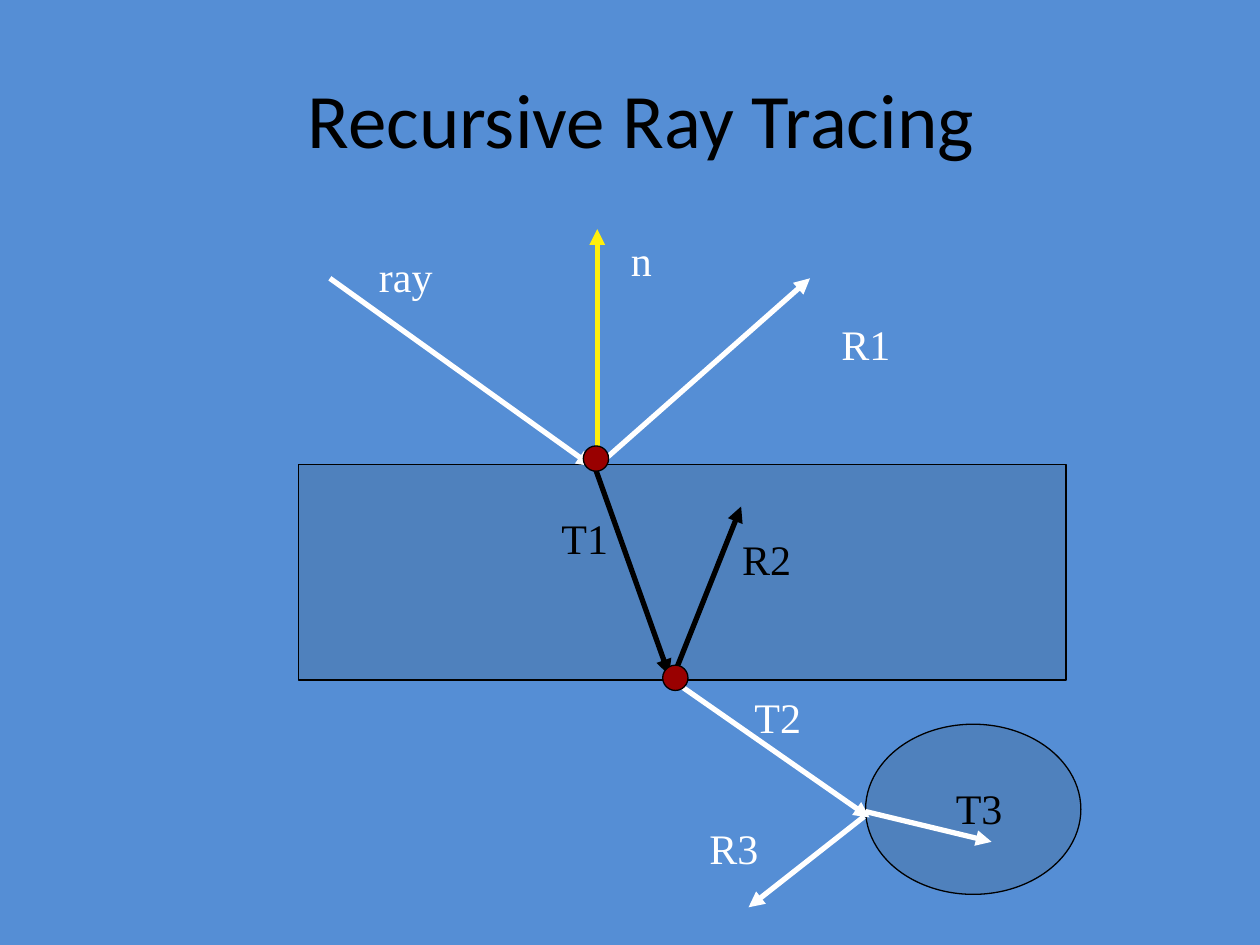
from pptx import Presentation
from pptx.dml.color import RGBColor
from pptx.enum.shapes import MSO_CONNECTOR, MSO_SHAPE
from pptx.enum.text import MSO_ANCHOR, MSO_AUTO_SIZE, PP_ALIGN
from pptx.oxml.ns import qn
from pptx.util import Cm, Pt
from lxml import etree

RECT = MSO_SHAPE.RECTANGLE
OVAL = MSO_SHAPE.OVAL
STRAIGHT = MSO_CONNECTOR.STRAIGHT
MIDDLE = MSO_ANCHOR.MIDDLE
CENTER = PP_ALIGN.CENTER
FIT_SHAPE = MSO_AUTO_SIZE.SHAPE_TO_FIT_TEXT

COLORS = {
    "background": "558ED5",
    "glass": "4F81BD",
    "hit": "990000",
    "normal": "FFEF0C",
    "white": "FFFFFF",
    "black": "000000",
}

RAYS = [
    (6.65, 5.61, 11.94, 9.4, "white"),
    (12.01, 9.47, 13.49, 13.61, "black"),
    (13.64, 13.77, 17.53, 16.48, "white"),
    (12.04, 9.37, 12.04, 4.62, "normal"),
    (12.07, 9.37, 16.33, 5.61, "white"),
    (13.56, 13.67, 14.94, 10.21, "black"),
    (17.42, 16.46, 15.09, 18.29, "white"),
    (17.45, 16.36, 19.99, 16.97, "white"),
]

LABELS = [
    ("n", 12.47, 4.6, 1.14, "white", True),
    ("ray", 7.39, 4.93, 1.6, "white", False),
    ("T3", 19.02, 15.65, 1.45, "black", False),
    ("R1", 16.71, 6.3, 1.65, "white", True),
    ("T1", 11.07, 10.21, 2.06, "black", True),
    ("R2", 14.71, 10.64, 1.5, "black", False),
    ("R3", 14.05, 16.46, 1.65, "white", True),
    ("T2", 14.96, 13.82, 1.45, "white", False),
]

HITS = [(11.76, 8.99), (13.36, 13.41)]
HIT_SIZE = 0.51


def rgb(name):
    return RGBColor.from_string(COLORS[name])


def format_text(p, font, size, color):
    for r in p.runs:
        r.font.name = font
        r.font.size = Pt(size)
        r.font.color.rgb = rgb(color)


def set_title(slide, text):
    sp = slide.shapes.title
    sp.left, sp.top, sp.width, sp.height = Cm(2.13), Cm(0.79), Cm(21.59), Cm(3.18)
    tf = sp.text_frame
    tf.text = text
    tf.vertical_anchor = MIDDLE
    p = tf.paragraphs[0]
    p.alignment = CENTER
    format_text(p, "Calibri", 44, "black")


def add_body(slide, kind, x, y, w, h, fill):
    sp = slide.shapes.add_shape(kind, Cm(x), Cm(y), Cm(w), Cm(h))
    sp.shadow.inherit = False
    sp.fill.solid()
    sp.fill.fore_color.rgb = rgb(fill)
    sp.line.color.rgb = rgb("black")
    sp.line.width = Pt(0.75)


def add_ray(slide, x1, y1, x2, y2, color):
    ray = slide.shapes.add_connector(STRAIGHT, Cm(x1), Cm(y1), Cm(x2), Cm(y2))
    ray.line.color.rgb = rgb(color)
    ray.line.width = Pt(3)
    sp_pr = ray._element.spPr
    etree.SubElement(sp_pr.find(qn("a:ln")), qn("a:tailEnd"), type="triangle")
    etree.SubElement(sp_pr, qn("a:effectLst"))


def add_label(slide, text, x, y, w, color, wrap):
    tf = slide.shapes.add_textbox(Cm(x), Cm(y), Cm(w), Cm(1.27)).text_frame
    tf.word_wrap = wrap
    tf.auto_size = FIT_SHAPE
    tf.text = text
    format_text(tf.paragraphs[0], "Times New Roman", 24, color)


def main():
    prs = Presentation()
    prs.slide_width, prs.slide_height = Cm(25.4), Cm(19.05)
    slide = prs.slides.add_slide(prs.slide_layouts[5])
    slide.background.fill.solid()
    slide.background.fill.fore_color.rgb = rgb("background")

    set_title(slide, "Recursive Ray Tracing")
    add_body(slide, OVAL, 17.45, 14.6, 4.34, 3.43, "glass")
    add_body(slide, RECT, 6.02, 9.37, 15.47, 4.34, "glass")
    for ray in RAYS:
        add_ray(slide, *ray)
    for label in LABELS:
        add_label(slide, *label)
    for x, y in HITS:
        add_body(slide, OVAL, x, y, HIT_SIZE, HIT_SIZE, "hit")

    prs.save("out.pptx")


if __name__ == "__main__":
    main()
